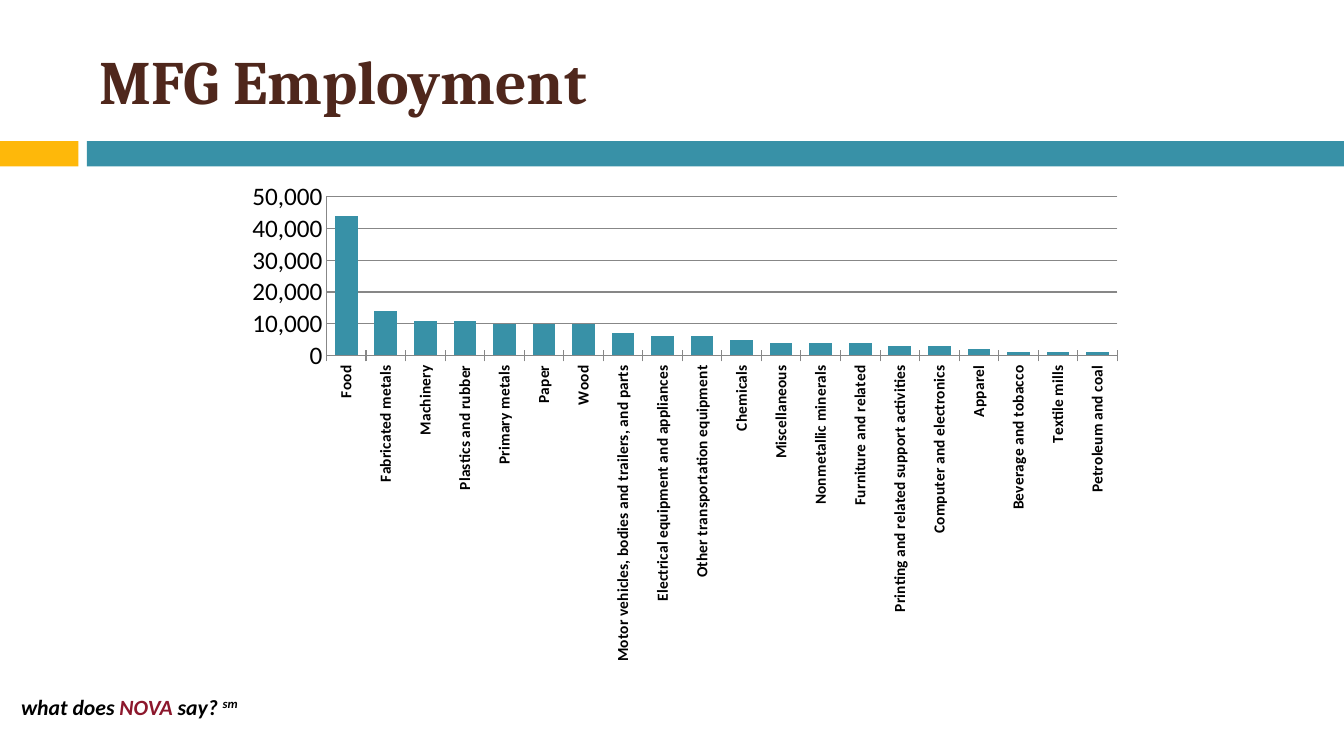
from dataclasses import dataclass

from lxml import etree
from pptx import Presentation
from pptx.chart.data import CategoryChartData
from pptx.dml.color import RGBColor
from pptx.enum.chart import XL_CHART_TYPE, XL_TICK_MARK
from pptx.enum.shapes import MSO_SHAPE
from pptx.enum.text import MSO_ANCHOR, MSO_AUTO_SIZE, PP_ALIGN
from pptx.oxml.ns import qn
from pptx.util import Pt

COLUMNS = XL_CHART_TYPE.COLUMN_CLUSTERED
CROSS, NO_TICK = XL_TICK_MARK.CROSS, XL_TICK_MARK.NONE
RECTANGLE = MSO_SHAPE.RECTANGLE
MIDDLE = MSO_ANCHOR.MIDDLE
FIT_SHAPE = MSO_AUTO_SIZE.SHAPE_TO_FIT_TEXT
LEFT = PP_ALIGN.LEFT
TITLE_ONLY = 5

EMPLOYMENT = {
    "Food": 44000,
    "Fabricated metals": 14000,
    "Machinery": 11000,
    "Plastics and rubber": 11000,
    "Primary metals": 10000,
    "Paper": 10000,
    "Wood": 10000,
    "Motor vehicles, bodies and trailers, and parts": 7000,
    "Electrical equipment and appliances": 6000,
    "Other transportation equipment": 6000,
    "Chemicals": 5000,
    "Miscellaneous": 4000,
    "Nonmetallic minerals": 4000,
    "Furniture and related": 4000,
    "Printing and related support activities": 3000,
    "Computer and electronics": 3000,
    "Apparel": 2000,
    "Beverage and tobacco": 1000,
    "Textile mills": 1000,
    "Petroleum and coal": 1000,
}
# Inner plot area as fractions of the chart frame
PLOT_AREA = {"x": 0.1, "y": 0.04, "w": 0.88, "h": 0.32}


@dataclass(frozen=True)
class Theme:
    gold: str = "FEB80A"
    teal: str = "3891A7"
    brown: str = "4F271C"
    crimson: str = "8C172C"
    black: str = "000000"
    grey: str = "878787"
    heading_font: str = "Cambria"
    body_font: str = "Calibri"
    title_size: float = 44
    chart_size: float = 18
    category_size: float = 11
    tagline_size: float = 15.5


def place(shape, left, top, width, height):
    box = {"left": left, "top": top, "width": width, "height": height}
    for name, value in box.items():
        setattr(shape, name, Pt(value))


def format_font(font, color, **values):
    for name, value in values.items():
        setattr(font, name, value)
    font.color.rgb = RGBColor.from_string(color)


class SlideBuilder:
    def __init__(self, slide, theme):
        self.slide = slide
        self.theme = theme

    def title(self, text, box):
        shape = self.slide.shapes.title
        place(shape, *box)
        frame = shape.text_frame
        frame.text = text
        frame.vertical_anchor = MIDDLE
        paragraph = frame.paragraphs[0]
        paragraph.alignment = LEFT
        format_font(paragraph.runs[0].font, self.theme.brown, bold=True,
                    name=self.theme.heading_font, size=Pt(self.theme.title_size))

    def bar(self, color, box):
        shape = self.slide.shapes.add_shape(RECTANGLE, *map(Pt, box))
        shape.shadow.inherit = False
        shape.fill.solid()
        shape.fill.fore_color.rgb = RGBColor.from_string(color)
        shape.line.fill.background()

    def tagline(self, parts, box):
        """Add one line of (text, color, baseline percent) parts."""
        frame = self.slide.shapes.add_textbox(*map(Pt, box)).text_frame
        frame.word_wrap = False
        frame.auto_size = FIT_SHAPE
        frame.paragraphs[0].alignment = LEFT
        for text, color, baseline in parts:
            run = frame.paragraphs[0].add_run()
            run.text = text
            format_font(run.font, color, bold=True, italic=True,
                        name=self.theme.body_font,
                        size=Pt(self.theme.tagline_size))
            if baseline:
                run._r.get_or_add_rPr().set("baseline", str(baseline * 1000))

    def column_chart(self, values, box):
        theme = self.theme
        data = CategoryChartData(number_format="#,##0")
        data.categories = list(values)
        data.add_series("Series 1", list(values.values()))
        chart = self.slide.shapes.add_chart(COLUMNS, *map(Pt, box), data).chart
        chart.has_legend = False
        chart.has_title = False
        format_font(chart.font, theme.black, name=theme.body_font,
                    size=Pt(theme.chart_size))
        plot = chart.plots[0]
        plot.gap_width, plot.overlap = 75, 40
        plot.vary_by_categories = False
        fill = plot.series[0].format.fill
        fill.solid()
        fill.fore_color.rgb = RGBColor.from_string(theme.teal)
        self.axes(chart)
        self.plot_layout(chart)

    def axes(self, chart):
        theme = self.theme
        categories, amounts = chart.category_axis, chart.value_axis
        categories.major_tick_mark = CROSS
        amounts.major_tick_mark = NO_TICK
        amounts.minimum_scale, amounts.maximum_scale = 0, 50000
        amounts.major_unit = 10000
        amounts.has_major_gridlines = True
        amounts.tick_labels.number_format = "#,##0"
        amounts.tick_labels.number_format_is_linked = False
        for part in (categories, amounts, amounts.major_gridlines):
            part.format.line.color.rgb = RGBColor.from_string(theme.grey)
            part.format.line.width = Pt(0.75)
        format_font(categories.tick_labels.font, theme.black, bold=True,
                    name=theme.body_font, size=Pt(theme.category_size))
        for body in chart.element.xpath(".//c:catAx/c:txPr/a:bodyPr"):
            body.set("rot", "-5400000")
            body.set("vert", "horz")

    def plot_layout(self, chart):
        area = chart.element.xpath(".//c:plotArea")[0]
        for old in area.findall(qn("c:layout")):
            area.remove(old)
        layout = etree.Element(qn("c:layout"))
        manual = etree.SubElement(layout, qn("c:manualLayout"))
        settings = {"layoutTarget": "inner", "xMode": "edge", "yMode": "edge"}
        for name, value in {**settings, **PLOT_AREA}.items():
            etree.SubElement(manual, qn(f"c:{name}")).set("val", str(value))
        area.insert(0, layout)


def main():
    presentation = Presentation()
    presentation.slide_width, presentation.slide_height = Pt(960), Pt(540)
    slide = presentation.slides.add_slide(presentation.slide_layouts[TITLE_ONLY])
    theme = Theme()
    builder = SlideBuilder(slide, theme)
    builder.bar(theme.gold, (0, 100.8, 56, 18))
    builder.bar(theme.teal, (62, 100.8, 898, 18))
    builder.tagline([("what does ", theme.black, 0),
                     ("NOVA ", theme.crimson, 0),
                     ("say? ", theme.black, 0),
                     ("sm", theme.black, 30)], (8, 492, 184, 26))
    builder.title("MFG Employment", (64, 18, 856, 78))
    builder.column_chart(EMPLOYMENT, (169, 126.5, 642, 354))
    presentation.save("out.pptx")


if __name__ == "__main__":
    main()
